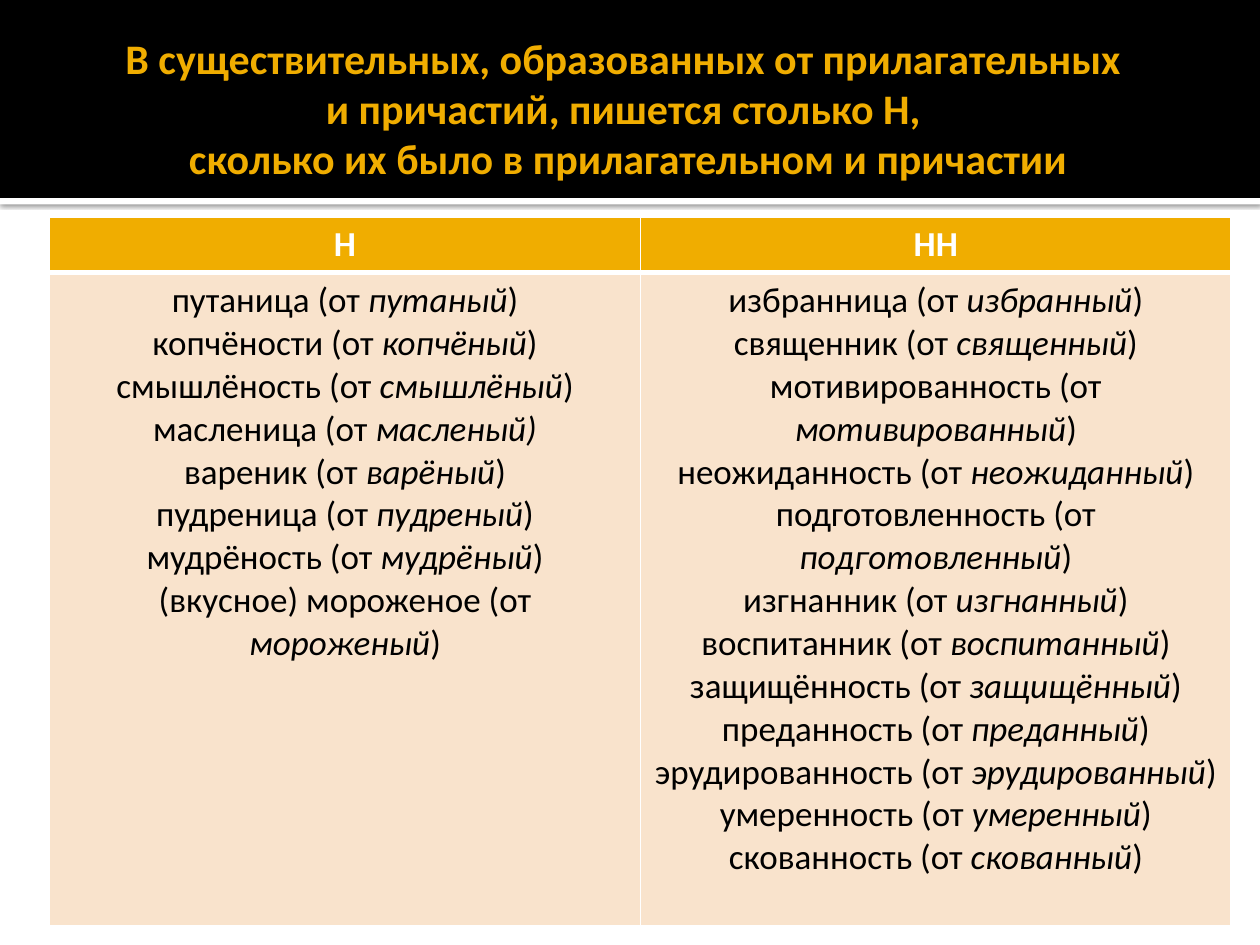
import dataclasses
import typing

import lxml.etree
import pptx
import pptx.dml.color
import pptx.enum.shapes
import pptx.enum.text
import pptx.oxml.ns
import pptx.util

Cm = pptx.util.Cm
Pt = pptx.util.Pt
FONT = "Calibri"
AMBER, CREAM, WHITE, BLACK = "F0AD00", "F9E3CC", "FFFFFF", "000000"


@dataclasses.dataclass
class Entry:
    noun: str
    source: str
    closing_italic: bool = False


@dataclasses.dataclass
class Column:
    heading: str
    entries: list[Entry]


COLUMNS = [
    Column("Н", [
        Entry("путаница", "путаный"),
        Entry("копчёности", "копчёный"),
        Entry("смышлёность", "смышлёный"),
        Entry("масленица", "масленый", closing_italic=True),
        Entry("вареник", "варёный"),
        Entry("пудреница", "пудреный"),
        Entry("мудрёность", "мудрёный"),
        Entry("(вкусное) мороженое", "мороженый"),
    ]),
    Column("НН", [
        Entry("избранница", "избранный"),
        Entry("священник", "священный"),
        Entry("мотивированность", "мотивированный"),
        Entry("неожиданность", "неожиданный"),
        Entry("подготовленность", "подготовленный"),
        Entry("изгнанник", "изгнанный"),
        Entry("воспитанник", "воспитанный"),
        Entry("защищённость", "защищённый"),
        Entry("преданность", "преданный"),
        Entry("эрудированность", "эрудированный"),
        Entry("умеренность", "умеренный"),
        Entry("скованность", "скованный"),
    ]),
]


def color(value: str) -> pptx.dml.color.RGBColor:
    return pptx.dml.color.RGBColor.from_string(value)


def add_child(parent: typing.Any, tag: str, **attributes: str) -> typing.Any:
    element = lxml.etree.SubElement(parent, pptx.oxml.ns.qn(tag))
    for name, value in attributes.items():
        element.set(name, value)
    return element


def add_band(page: typing.Any, top: float, height: float, fill: str) -> typing.Any:
    band = page.shapes.add_shape(
        pptx.enum.shapes.MSO_SHAPE.RECTANGLE, Cm(0), Cm(top), Cm(25.4), Cm(height))
    band.shadow.inherit = False
    band.fill.solid()
    band.fill.fore_color.rgb = color(fill)
    band.line.fill.background()
    return band


def add_shadow(band: typing.Any) -> None:
    effects = band._element.spPr.find(pptx.oxml.ns.qn("a:effectLst"))
    shadow = add_child(effects, "a:outerShdw", blurRad=str(Pt(2.5)), dist=str(Pt(0.8)),
                       dir="5400000", algn="t", rotWithShape="0")
    add_child(add_child(shadow, "a:srgbClr", val=BLACK), "a:alpha", val="60000")


def style_paragraph(para: typing.Any, size: int, ink: str, bold: bool) -> None:
    para.alignment = pptx.enum.text.PP_ALIGN.CENTER
    para.font.name = FONT
    para.font.size = Pt(size)
    para.font.bold = bold
    para.font.color.rgb = color(ink)


def style_cell(cell: typing.Any, fill: str, bottom: float) -> None:
    cell.margin_left = cell.margin_right = Cm(0.28)
    cell.margin_top = cell.margin_bottom = Cm(0.13)
    properties = cell._tc.get_or_add_tcPr()
    for side, width in (("L", 1), ("R", 1), ("T", 1), ("B", bottom)):
        line = add_child(properties, f"a:ln{side}", w=str(Pt(width)))
        add_child(add_child(line, "a:solidFill"), "a:srgbClr", val=WHITE)
    cell.fill.solid()
    cell.fill.fore_color.rgb = color(fill)


def write_entry(para: typing.Any, entry: Entry) -> None:
    pieces = ((f"{entry.noun} (от ", False), (entry.source, True),
              (")", entry.closing_italic))
    for text, italic in pieces:
        span = para.add_run()
        span.text = text
        span.font.italic = italic
    style_paragraph(para, 20, BLACK, False)


def add_title(page: typing.Any) -> None:
    box = page.shapes.add_textbox(Cm(0.79), Cm(0.43), Cm(23.62), Cm(3.48))
    frame = box.text_frame
    frame.word_wrap = True
    frame.vertical_anchor = pptx.enum.text.MSO_ANCHOR.MIDDLE
    frame.margin_left = Cm(0.25)
    frame.margin_right = frame.margin_top = frame.margin_bottom = Cm(0.13)
    para = frame.paragraphs[0]
    para.text = ("В существительных, образованных от прилагательных \v"
                 "и причастий, пишется столько Н, \v"
                 "сколько их было в прилагательном и причастии")
    style_paragraph(para, 24, AMBER, True)


def add_word_table(page: typing.Any) -> None:
    table = page.shapes.add_table(
        2, len(COLUMNS), Cm(1), Cm(4.37), Cm(23.82), Cm(14.29)).table
    table.rows[0].height = Cm(1.13)
    table.rows[1].height = Cm(13.16)
    for index, column in enumerate(COLUMNS):
        heading, body = table.cell(0, index), table.cell(1, index)
        style_cell(heading, AMBER, 3)
        style_cell(body, CREAM, 1)
        para = heading.text_frame.paragraphs[0]
        para.text = column.heading
        style_paragraph(para, 20, WHITE, True)
        frame = body.text_frame
        for number, entry in enumerate(column.entries):
            para = frame.add_paragraph() if number else frame.paragraphs[0]
            write_entry(para, entry)


def main() -> None:
    deck = pptx.Presentation()
    deck.slide_width, deck.slide_height = Cm(25.4), Cm(19.05)
    page = deck.slides.add_slide(deck.slide_layouts[6])

    # Header: white strip with a shadow under a black band
    add_shadow(add_band(page, 3.99, 0.13, WHITE))
    add_band(page, 0, 3.99, BLACK)
    add_title(page)

    # Word lists
    add_word_table(page)
    deck.save("out.pptx")


if __name__ == "__main__":
    main()
